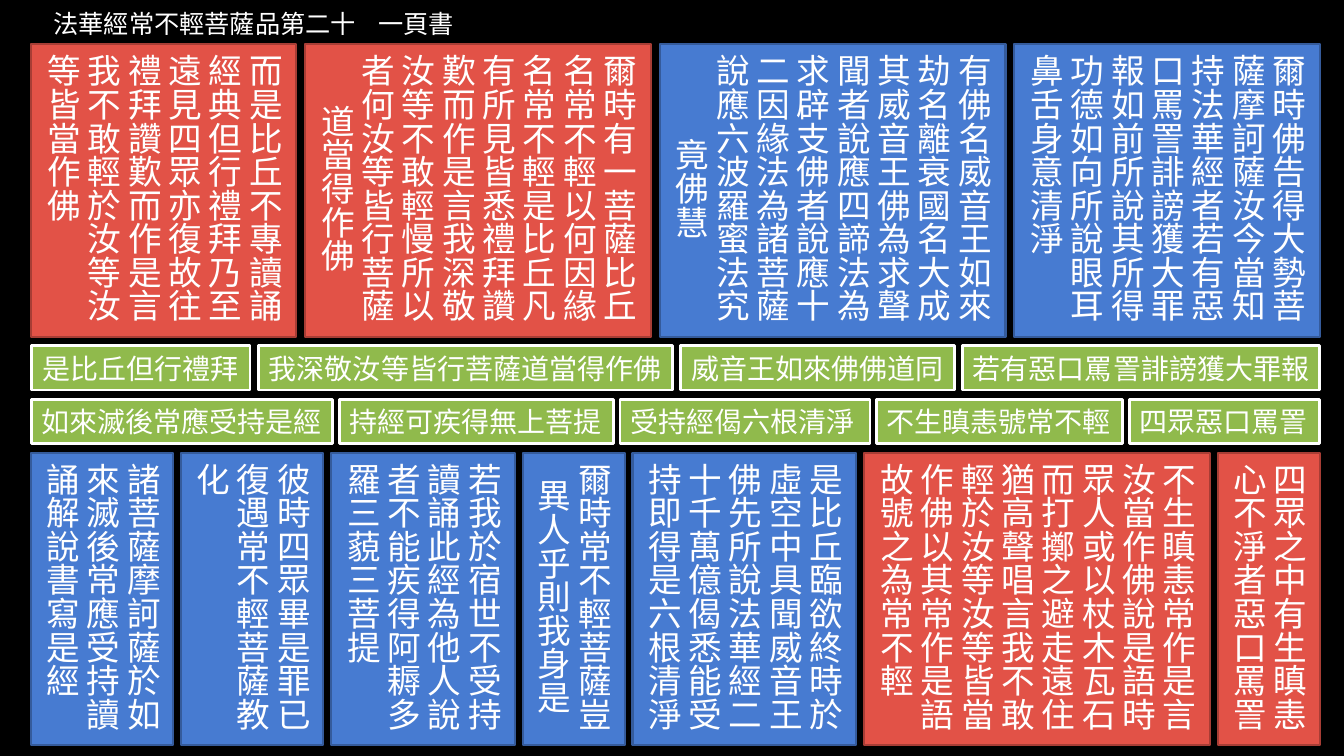
from lxml import etree
from pptx import Presentation
from pptx.dml.color import RGBColor
from pptx.enum.shapes import MSO_SHAPE
from pptx.enum.text import MSO_ANCHOR, MSO_AUTO_SIZE, PP_ALIGN
from pptx.oxml.ns import qn
from pptx.util import Inches, Pt

RECT = MSO_SHAPE.RECTANGLE
TOP, MIDDLE = MSO_ANCHOR.TOP, MSO_ANCHOR.MIDDLE
LEFT, CENTER = PP_ALIGN.LEFT, PP_ALIGN.CENTER
GROW = MSO_AUTO_SIZE.SHAPE_TO_FIT_TEXT

FONT = "Noto Sans CJK SC"
BLACK = RGBColor(0x00, 0x00, 0x00)
WHITE = RGBColor(0xFF, 0xFF, 0xFF)
BLUE = RGBColor(0x47, 0x7B, 0xD1)
NAVY = RGBColor(0x35, 0x5B, 0x9B)
RED = RGBColor(0xE2, 0x52, 0x47)
BRICK = RGBColor(0xA7, 0x3D, 0x35)
GREEN = RGBColor(0x90, 0xBA, 0x4C)
EDGES = {BLUE: NAVY, RED: BRICK, GREEN: WHITE}

START, END = 0.31, 13.09
TALL, LOW = 2.9, 0.44

UPPER = [
    (2.63, RED, LEFT, "而是比丘不專讀誦經典但行禮拜乃至遠見四眾亦復故往禮拜讚歎而作是言我不敢輕於汝等汝等皆當作佛"),
    (3.43, RED, CENTER, "爾時有一菩薩比丘名常不輕以何因緣名常不輕是比丘凡有所見皆悉禮拜讚歎而作是言我深敬汝等不敢輕慢所以者何汝等皆行菩薩道當得作佛"),
    (3.43, BLUE, CENTER, "有佛名威音王如來劫名離衰國名大成其威音王佛為求聲聞者說應四諦法為求辟支佛者說應十二因緣法為諸菩薩說應六波羅蜜法究竟佛慧"),
    (3.03, BLUE, LEFT, "爾時佛告得大勢菩薩摩訶薩汝今當知持法華經者若有惡口罵詈誹謗獲大罪報如前所說其所得功德如向所說眼耳鼻舌身意清淨"),
]
THEMES = [
    (2.17, GREEN, CENTER, "是比丘但行禮拜"),
    (4.11, GREEN, CENTER, "我深敬汝等皆行菩薩道當得作佛"),
    (2.72, GREEN, CENTER, "威音王如來佛佛道同"),
    (3.54, GREEN, LEFT, "若有惡口罵詈誹謗獲大罪報"),
]
FRUITS = [
    (2.99, GREEN, LEFT, "如來滅後常應受持是經"),
    (2.72, GREEN, LEFT, "持經可疾得無上菩提"),
    (2.48, GREEN, LEFT, "受持經偈六根清淨"),
    (2.44, GREEN, LEFT, "不生瞋恚號常不輕"),
    (1.89, GREEN, LEFT, "四眾惡口罵詈"),
]
LOWER = [
    (1.41, BLUE, LEFT, "諸菩薩摩訶薩於如來滅後常應受持讀誦解說書寫是經"),
    (1.41, BLUE, LEFT, "彼時四眾畢是罪已復遇常不輕菩薩教化"),
    (1.82, BLUE, LEFT, "若我於宿世不受持讀誦此經為他人說者不能疾得阿耨多羅三藐三菩提"),
    (1.01, BLUE, CENTER, "爾時常不輕菩薩豈異人乎則我身是"),
    (2.22, BLUE, LEFT, "是比丘臨欲終時於虛空中具聞威音王佛先所說法華經二十千萬億偈悉能受持即得是六根清淨"),
    (3.43, RED, LEFT, "不生瞋恚常作是言汝當作佛說是語時眾人或以杖木瓦石而打擲之避走遠住猶高聲唱言我不敢輕於汝等汝等皆當作佛以其常作是語故號之為常不輕"),
    (1.01, RED, LEFT, "四眾之中有生瞋恚心不淨者惡口罵詈"),
]


def write(frame, text, size, align, anchor):
    frame.auto_size = GROW
    frame.vertical_anchor = anchor
    para = frame.paragraphs[0]
    para.alignment = align
    run = para.add_run()
    run.text = text
    font = run.font
    font.size = Pt(size)
    font.name = FONT
    font.color.rgb = WHITE
    east = etree.SubElement(run._r.get_or_add_rPr(), qn("a:ea"))
    east.set("typeface", FONT)
    return para


def add_title(slide, left, top, width, height):
    title = slide.shapes.title
    title.left, title.top = Inches(left), Inches(top)
    title.width, title.height = Inches(width), Inches(height)
    title.text_frame.word_wrap = True
    para = write(title.text_frame, "法華經常不輕菩薩品第二十\t一頁書", 18, LEFT, TOP)
    props = para._p.get_or_add_pPr()
    stops = etree.SubElement(props, qn("a:tabLst"))
    etree.SubElement(stops, qn("a:tab"), pos=str(Inches(3.22)), algn="l")


def add_panel(slide, left, top, width, height, fill, align, text):
    panel = slide.shapes.add_shape(
        RECT, Inches(left), Inches(top), Inches(width), Inches(height))
    panel.shadow.inherit = False
    panel.fill.solid()
    panel.fill.fore_color.rgb = fill
    panel.line.color.rgb = EDGES[fill]
    strip = fill == GREEN
    panel.line.width = Pt(2 if strip else 1.5)
    frame = panel.text_frame
    frame.word_wrap = not strip
    if not strip:
        frame._txBody.bodyPr.set("vert", "eaVert")
    write(frame, text, 20 if strip else 24, align, MIDDLE)


def add_row(slide, top, height, panels):
    used = sum(panel[0] for panel in panels)
    gap = (END - START - used) / (len(panels) - 1)
    left = START
    for width, fill, align, text in panels:
        add_panel(slide, left, top, width, height, fill, align, text)
        left += width + gap


def main():
    deck = Presentation()
    deck.slide_width, deck.slide_height = Inches(13.33), Inches(7.5)
    slide = deck.slides.add_slide(deck.slide_layouts[5])
    slide.background.fill.solid()
    slide.background.fill.fore_color.rgb = BLACK
    add_title(slide, 0.43, 0.03, 4.29, 0.4)
    add_row(slide, 0.44, TALL, UPPER)
    add_row(slide, 3.43, LOW, THEMES)
    add_row(slide, 3.96, LOW, FRUITS)
    add_row(slide, 4.49, TALL, LOWER)
    deck.save("out.pptx")


if __name__ == "__main__":
    main()
